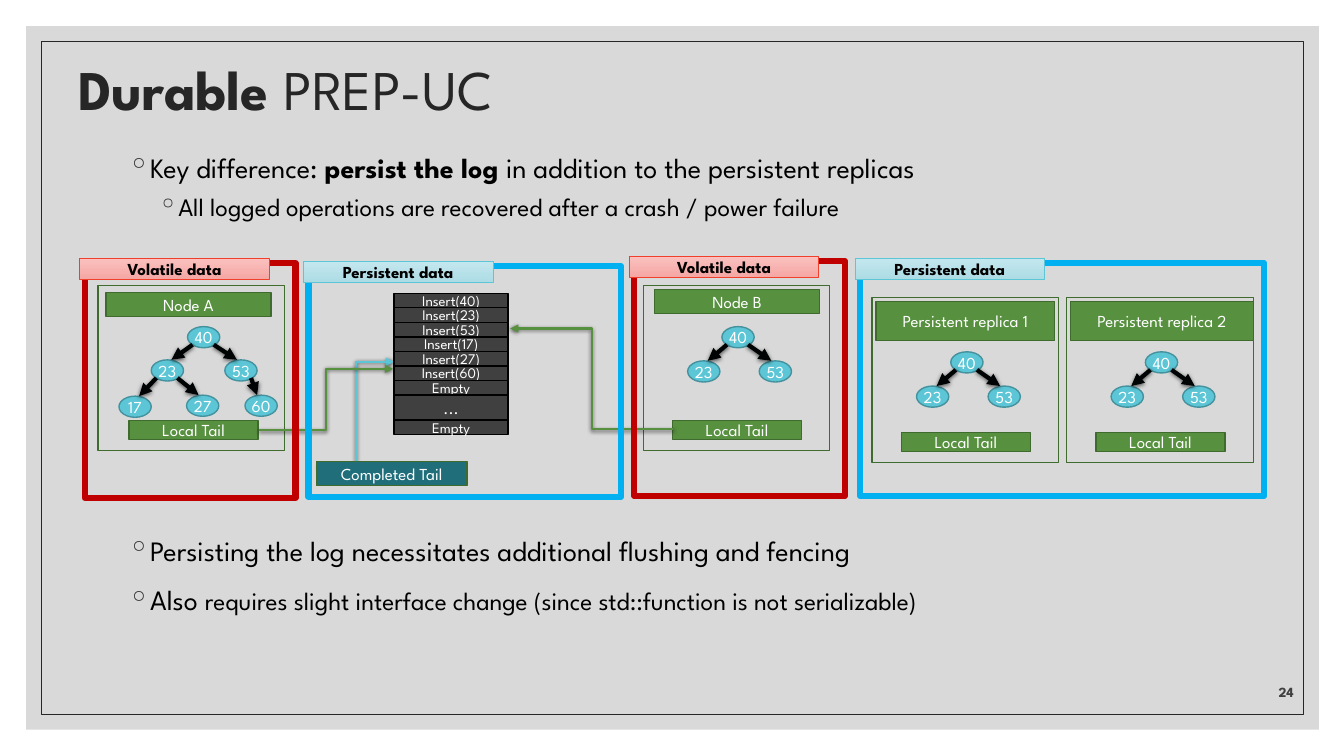
from lxml import etree
from pptx import Presentation
from pptx.dml.color import RGBColor
from pptx.enum.shapes import MSO_CONNECTOR, MSO_SHAPE
from pptx.enum.text import MSO_ANCHOR, PP_ALIGN
from pptx.oxml import parse_xml
from pptx.oxml.ns import nsdecls, qn
from pptx.util import Inches, Pt

RECT, OVAL = MSO_SHAPE.RECTANGLE, MSO_SHAPE.OVAL
LINE, BENT = MSO_CONNECTOR.STRAIGHT, MSO_CONNECTOR.ELBOW
TOP, MID, LOW = MSO_ANCHOR.TOP, MSO_ANCHOR.MIDDLE, MSO_ANCHOR.BOTTOM
LEFT, RIGHT, CENTER = PP_ALIGN.LEFT, PP_ALIGN.RIGHT, PP_ALIGN.CENTER

BLACK = RGBColor(0x00, 0x00, 0x00)
WHITE = RGBColor(0xFF, 0xFF, 0xFF)
PAPER = RGBColor(0xD9, 0xD9, 0xD9)
INK = RGBColor(0x26, 0x26, 0x26)
GRAY = RGBColor(0x40, 0x40, 0x40)
GREEN = RGBColor(0x57, 0x90, 0x3F)
MOSS = RGBColor(0x40, 0x6B, 0x2F)
AQUA = RGBColor(0x5C, 0xC6, 0xD6)
TEAL = RGBColor(0x44, 0x92, 0x9E)
DEEP = RGBColor(0x1F, 0x6E, 0x7A)
ARROW = RGBColor(0x00, 0x03, 0x04)
RED = RGBColor(0xC0, 0x00, 0x00)
BLUE = RGBColor(0x00, 0xB0, 0xF0)
CORAL = RGBColor(0xF0, 0x3F, 0x2B)
PINK = (RGBColor(0xFA, 0xC1, 0xBF), RGBColor(0xF5, 0xA7, 0xA4))
SKY = (RGBColor(0xC4, 0xE7, 0xEE), RGBColor(0xAD, 0xDC, 0xE5))

FONT = "League Spartan"
CELL = Inches(0.1)

deck = Presentation()
deck.slide_width, deck.slide_height = Inches(13.33), Inches(7.5)
slide = deck.slides.add_slide(deck.slide_layouts[6])
shapes = slide.shapes


def box(kind, place, fill, edge, width=1, text="", size=12, color=WHITE, bold=False):
    shape = shapes.add_shape(kind, *[round(n * CELL) for n in place])
    shape.shadow.inherit = False
    if fill is None:
        shape.fill.background()
    elif isinstance(fill, RGBColor):
        shape.fill.solid()
        shape.fill.fore_color.rgb = fill
    else:
        shape.fill.gradient()
        shape.fill.gradient_angle = 270
        for stop, tint in zip(shape.fill.gradient_stops, fill):
            stop.color.rgb = tint
    if edge is None:
        shape.line.fill.background()
    else:
        shape.line.color.rgb = edge
        shape.line.width = Pt(width)
    if text:
        frame = shape.text_frame
        frame.text = text
        frame.word_wrap = kind != OVAL
        frame.vertical_anchor = MID
        para = frame.paragraphs[0]
        para.alignment = CENTER
        font = para.runs[0].font
        font.name, font.size, font.bold = FONT, Pt(size), bold
        font.color.rgb = color


def link(kind, ends, color, width):
    wire = shapes.add_connector(kind, *[round(n * CELL) for n in ends])
    wire.line.color.rgb = color
    wire.line.width = Pt(width)
    etree.SubElement(wire.line._get_or_add_ln(), qn("a:tailEnd"), type="triangle")
    wire._element.spPr.append(parse_xml(
        f'<a:effectLst {nsdecls("a")}><a:outerShdw blurRad="38100" dist="12700" '
        'dir="5400000" rotWithShape="0"><a:srgbClr val="000000">'
        '<a:alpha val="63000"/></a:srgbClr></a:outerShdw></a:effectLst>'))


box(RECT, (2.6, 2.6, 128.2, 69.8), PAPER, None)
box(RECT, (4.1, 4.1, 125.2, 66.8), None, INK, 0.5)

texts = [
    ((6.8, 4.8, 110, 8.8), MID, LEFT, INK, [
        (None, 0.9, 0, [("Durable ", 40, True), ("PREP-UC", 40, False)])]),
    ((11.7, 14.1, 110, 10), TOP, LEFT, BLACK, [
        (0.2, 1.1, 9, [("Key difference: ", 20, False), ("persist the log ", 20, True),
                       ("in addition to the persistent replicas", 20, False)]),
        (0.5, 1, 5, [("All logged operations are recovered after a crash / power failure",
                      18, False)])]),
    ((11.7, 52.1, 110, 13), TOP, LEFT, BLACK, [
        (0.2, 1.1, 9, [("Persisting the log necessitates additional flushing and fencing",
                        20, False)]),
        (0.2, 1.1, 9, [("Also ", 20, False),
                       ("requires slight interface change (since std::function is not "
                        "serializable)", 18, False)])]),
    ((120.1, 66, 9.2, 4), LOW, RIGHT, GRAY, [(None, 1, 0, [("24", 10, True)])]),
]
for place, anchor, align, color, paras in texts:
    frame = shapes.add_textbox(*[round(n * CELL) for n in place]).text_frame
    frame.word_wrap = True
    frame.vertical_anchor = anchor
    for i, (indent, pitch, gap, parts) in enumerate(paras):
        para = frame.add_paragraph() if i else frame.paragraphs[0]
        para.alignment = align
        para.line_spacing = pitch
        para.space_before = Pt(gap)
        if indent:
            props = para._p.get_or_add_pPr()
            props.set("marL", str(Inches(indent)))
            props.set("indent", str(-Inches(0.2)))
            tint = etree.SubElement(props, qn("a:buClr"))
            etree.SubElement(tint, qn("a:srgbClr"), val=str(INK))
            etree.SubElement(props, qn("a:buChar"), char="◦")
        for words, size, bold in parts:
            run = para.add_run()
            run.text = words
            run.font.name, run.font.size, run.font.bold = FONT, Pt(size), bold
            run.font.color.rgb = color

link(BENT, (31.5, 46.2, 39.1, 35.9), AQUA, 1.5)

panels = [
    ("Node A", (10.5, 29, 16.4, 2.4), (9.7, 28.3), (12.8, 41.7)),
    ("Node B", (64.9, 28.7, 16.4, 2.4), (63.8, 28.3), (66.7, 41.7)),
    ("Persistent replica 1", (86.9, 29.9, 17.7, 3.9), (86.5, 29.5), (89.4, 42.9)),
    ("Persistent replica 2", (106.2, 29.9, 18.1, 3.9), (105.8, 29.5), (108.7, 42.9)),
]
for name, head, frame, tail in panels:
    box(RECT, head, GREEN, MOSS, text=name)
    box(RECT, (*tail, 12.8, 1.9), GREEN, MOSS, text="Local Tail")
    box(RECT, (*frame, 18.5, 16.4), None, MOSS)

small = [("40", 0, 0, None), ("23", -3.4, 3.4, "40"), ("53", 3.7, 3.4, "40")]
large = [("40", 0, 0, None), ("23", -3.6, 3.3, "40"), ("53", 3.7, 3.3, "40"),
         ("17", -6.8, 6.9, "23"), ("27", -0.1, 6.8, "23"), ("60", 5.7, 6.8, "53")]
trees = [(18.6, 32.4, large), (71.6, 32.4, small),
         (94.3, 34.9, small), (113.6, 34.9, small)]
for left, top, nodes in trees:
    spots = {key: (left + dx, top + dy) for key, dx, dy, root in nodes}
    for key, dx, dy, root in nodes:
        x, y = spots[key]
        box(OVAL, (x, y, 3.2, 2.1), AQUA, TEAL, text=key)
        if root:
            a, b = spots[root]
            start, end = (0.5, 2) if x < a else (2.6, 1.2)
            link(LINE, (a + start, b + 1.8, x + end, y), ARROW, 3)

log = ["Insert(40)", "Insert(23)", "Insert(53)", "Insert(17)", "Insert(27)",
       "Insert(60)", "Empty", "...", "Empty"]
row = 29.1
for entry in log:
    tall, size = (2.5, 12) if entry == "..." else (1.44, 10.5)
    box(RECT, (39.1, row, 11.3, tall), GRAY, BLACK, text=entry, size=size)
    row += tall

link(BENT, (66.8, 42.6, 50.6, 32.6), GREEN, 1.5)
link(BENT, (25.7, 42.7, 39, 36.6), GREEN, 1.5)
box(RECT, (31.4, 45.8, 14.9, 2.4), DEEP, MOSS, text="Completed Tail")

zones = [
    ("Volatile data", (8.4, 26.1, 20.9, 23.3), RED, PINK, CORAL),
    ("Persistent data", (85.3, 26.1, 40.1, 23.1), BLUE, SKY, AQUA),
    ("Volatile data", (62.9, 25.9, 20.9, 23.3), RED, PINK, CORAL),
    ("Persistent data", (30.6, 26.4, 31, 22.9), BLUE, SKY, AQUA),
]
for name, place, edge, fill, rim in zones:
    box(RECT, place, None, edge, 4.5)
    box(RECT, (place[0] - 0.5, place[1] - 0.5, 18.8, 2.1), fill, rim, 0.5,
        name, color=BLACK, bold=True)

deck.save("out.pptx")
